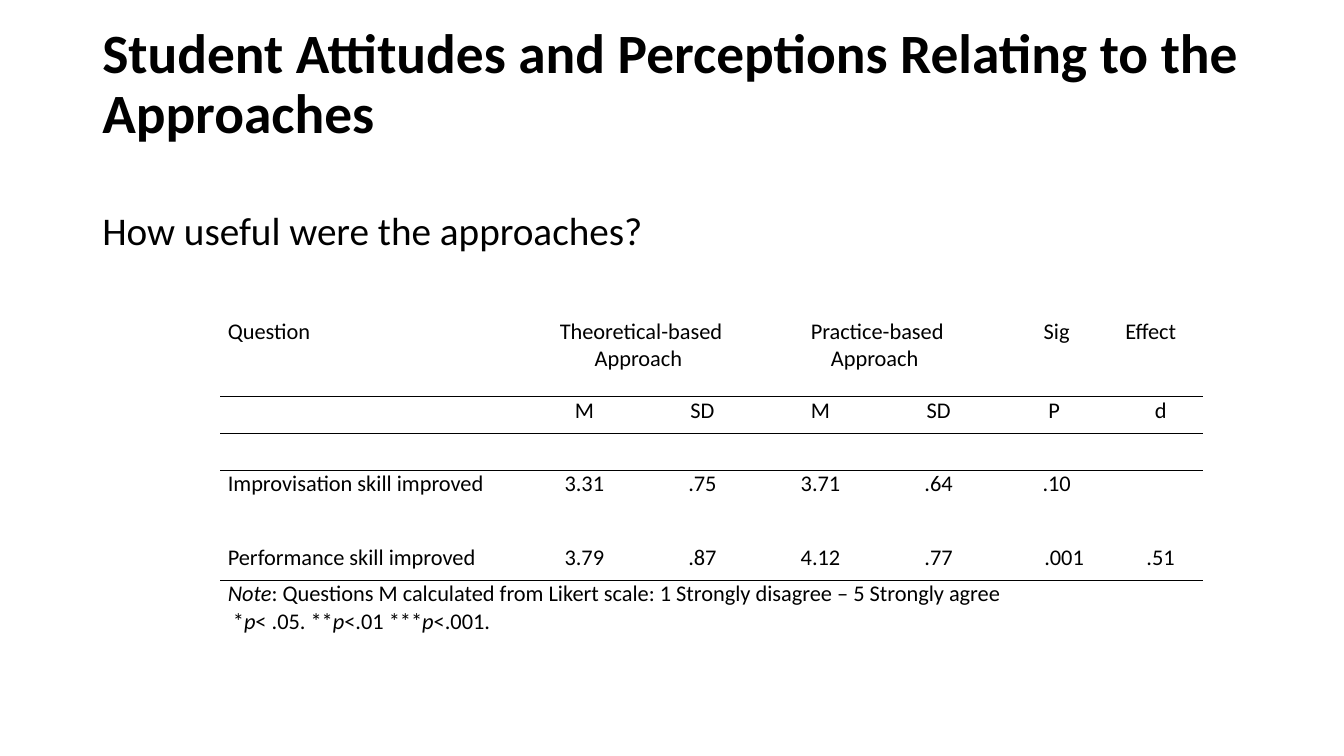
import dataclasses

import pptx
import pptx.dml.color
import pptx.enum.text
import pptx.oxml
import pptx.oxml.ns
import pptx.util

PX = 9525  # EMU in one px, 96 px to the inch
ALIGN = pptx.enum.text.PP_ALIGN
ANCHOR = pptx.enum.text.MSO_ANCHOR


@dataclasses.dataclass(frozen=True)
class Theme:
    font: str = "Calibri"
    ink: str = "000000"
    title: float = 39.6
    body: float = 28
    cell: float = 16
    rule: float = 1
    plain: str = "{2D5ABB26-0587-4C30-8999-92F81FD0307C}"  # no style, no grid


@dataclasses.dataclass(frozen=True)
class Label:
    text: str
    left: int
    top: int
    width: int
    height: int
    size: float
    bold: bool = False
    space: float = 1.0
    foot: int = 5
    anchor: ANCHOR = ANCHOR.TOP


@dataclasses.dataclass(frozen=True)
class Cell:
    text: str
    span: int = 1
    align: ALIGN = ALIGN.CENTER
    indent: int = 0


THEME = Theme()

LABELS = [
    Label("Student Attitudes and Perceptions Relating to the Approaches",
          88, 38, 1104, 139, THEME.title, bold=True, space=0.9, foot=56,
          anchor=ANCHOR.MIDDLE),
    Label("How useful were the approaches?", 88, 192, 1104, 457, THEME.body),
]

# Table: columns, rows, and the cells by row and column
COLS = [288, 117, 108, 117, 108, 117, 81]
ROWS = [75] + [35] * 6
RULED = {0, 1, 5}  # rows with a line below
NOTE = ("_Note_: Questions M calculated from Likert scale: "
        "1 Strongly disagree – 5 Strongly agree\n"
        " *_p_< .05. **_p_<.01 ***_p_<.001.")
CELLS = {
    (0, 0): Cell("Question", align=ALIGN.LEFT),
    (0, 1): Cell("Theoretical-based Approach ", span=2),
    (0, 3): Cell("Practice-based Approach ", span=2),
    (0, 5): Cell("Sig"),
    (0, 6): Cell("Effect", align=ALIGN.LEFT),
    (3, 0): Cell("Improvisation skill improved", align=ALIGN.LEFT),
    (5, 0): Cell("Performance skill improved", align=ALIGN.LEFT),
    (5, 5): Cell(".001", indent=14),
    (6, 0): Cell(NOTE, span=7, align=ALIGN.LEFT),
}
SERIES = {
    1: ["M", "SD", "M", "SD", "P ", "d"],
    3: ["3.31", ".75", "3.71", ".64", ".10"],
    5: ["3.79", ".87", "4.12", ".77", ".001", ".51"],
}
for row, texts in SERIES.items():
    for col, text in enumerate(texts, 1):
        CELLS.setdefault((row, col), Cell(text))


def write(frame, text: str, *, size: float, bold: bool = False,
          align: ALIGN = ALIGN.LEFT, space: float = 1.0) -> None:
    """Fill a text frame; parts between underscores are italic."""
    for i, line in enumerate(text.split("\n")):
        para = frame.add_paragraph() if i else frame.paragraphs[0]
        para.alignment = align
        para.line_spacing = space
        for j, part in enumerate(line.split("_")):
            if not part:
                continue
            run = para.add_run()
            run.text = part
            font = run.font
            font.name, font.size = THEME.font, pptx.util.Pt(size)
            font.bold, font.italic = bold, j % 2 == 1
            font.color.rgb = pptx.dml.color.RGBColor.from_string(THEME.ink)


def label(slide, item: Label) -> None:
    box = slide.shapes.add_textbox(
        *(n * PX for n in (item.left, item.top, item.width, item.height)))
    frame = box.text_frame
    frame.word_wrap = True
    frame.vertical_anchor = item.anchor
    frame.margin_bottom = item.foot * PX
    write(frame, item.text, size=item.size, bold=item.bold, space=item.space)


def rule(cell, side: str) -> None:
    """Draw a line on one side of a cell: T or B."""
    line = pptx.oxml.parse_xml(
        f'<a:ln{side} {pptx.oxml.ns.nsdecls("a")} '
        f'w="{pptx.util.Pt(THEME.rule)}"><a:solidFill>'
        f'<a:srgbClr val="{THEME.ink}"/></a:solidFill></a:ln{side}>')
    cell._tc.get_or_add_tcPr().insert(0, line)


def grid(slide) -> None:
    shape = slide.shapes.add_table(
        len(ROWS), len(COLS), 210 * PX, 303 * PX, sum(COLS) * PX, sum(ROWS) * PX)
    table = shape.table
    table.first_row = table.horz_banding = False
    table._tbl.tblPr.find(pptx.oxml.ns.qn("a:tableStyleId")).text = THEME.plain
    for col, width in zip(table.columns, COLS):
        col.width = width * PX
    for r, height in enumerate(ROWS):
        table.rows[r].height = height * PX
        for c in range(len(COLS)):
            cell = table.cell(r, c)
            item = CELLS.get((r, c), Cell(""))
            cell.fill.background()
            if r in RULED:
                rule(cell, "B")
            if r - 1 in RULED:
                rule(cell, "T")
            cell.margin_left, cell.margin_right = (7 + item.indent) * PX, 7 * PX
            cell.margin_top = cell.margin_bottom = 0
            if item.span > 1:
                cell.merge(table.cell(r, c + item.span - 1))
            if item.text:
                write(cell.text_frame, item.text, size=THEME.cell, align=item.align)


def main() -> None:
    deck = pptx.Presentation()
    deck.slide_width, deck.slide_height = 1280 * PX, 720 * PX
    slide = deck.slides.add_slide(deck.slide_layouts[6])
    for item in LABELS:
        label(slide, item)
    grid(slide)
    deck.save("out.pptx")


if __name__ == "__main__":
    main()
